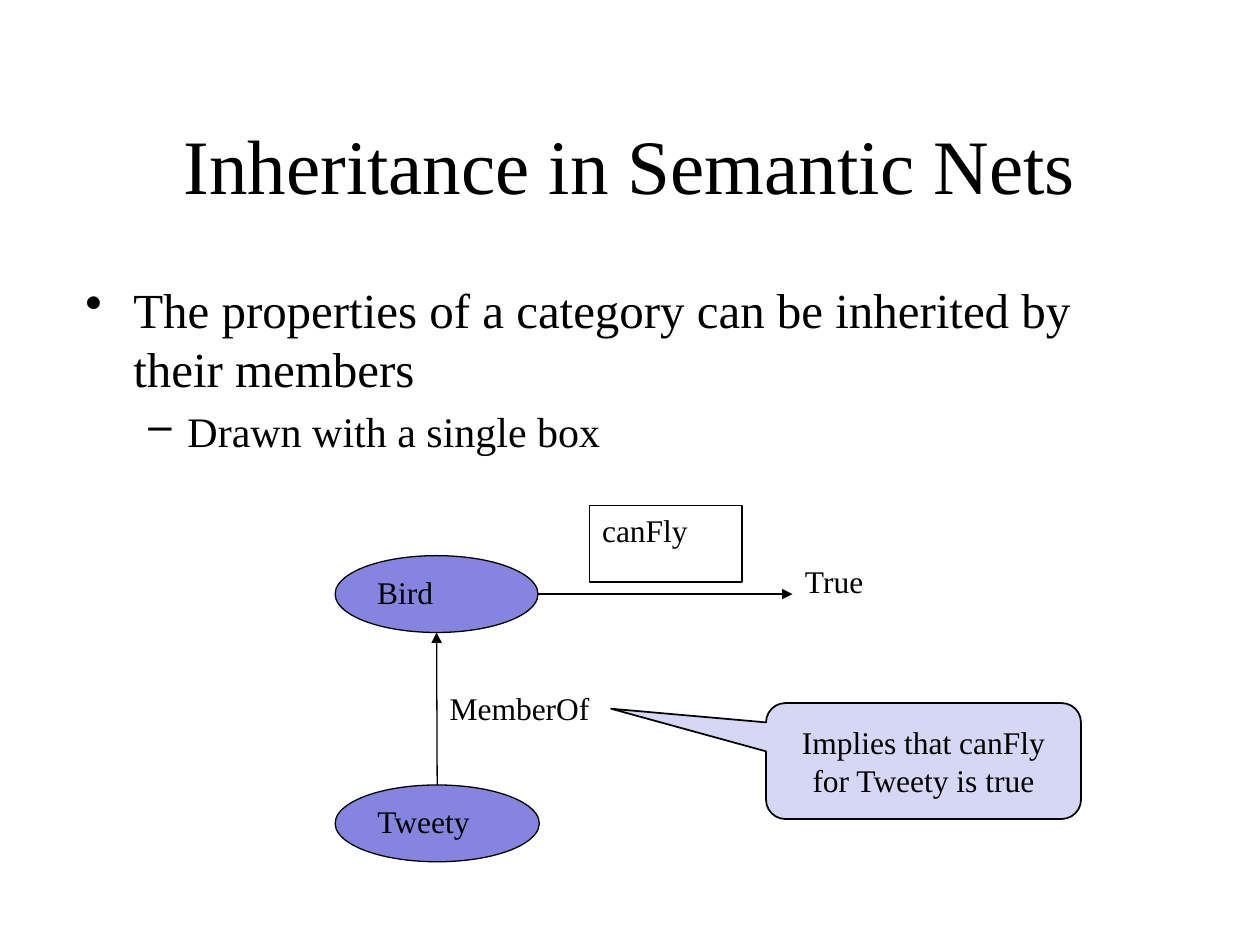
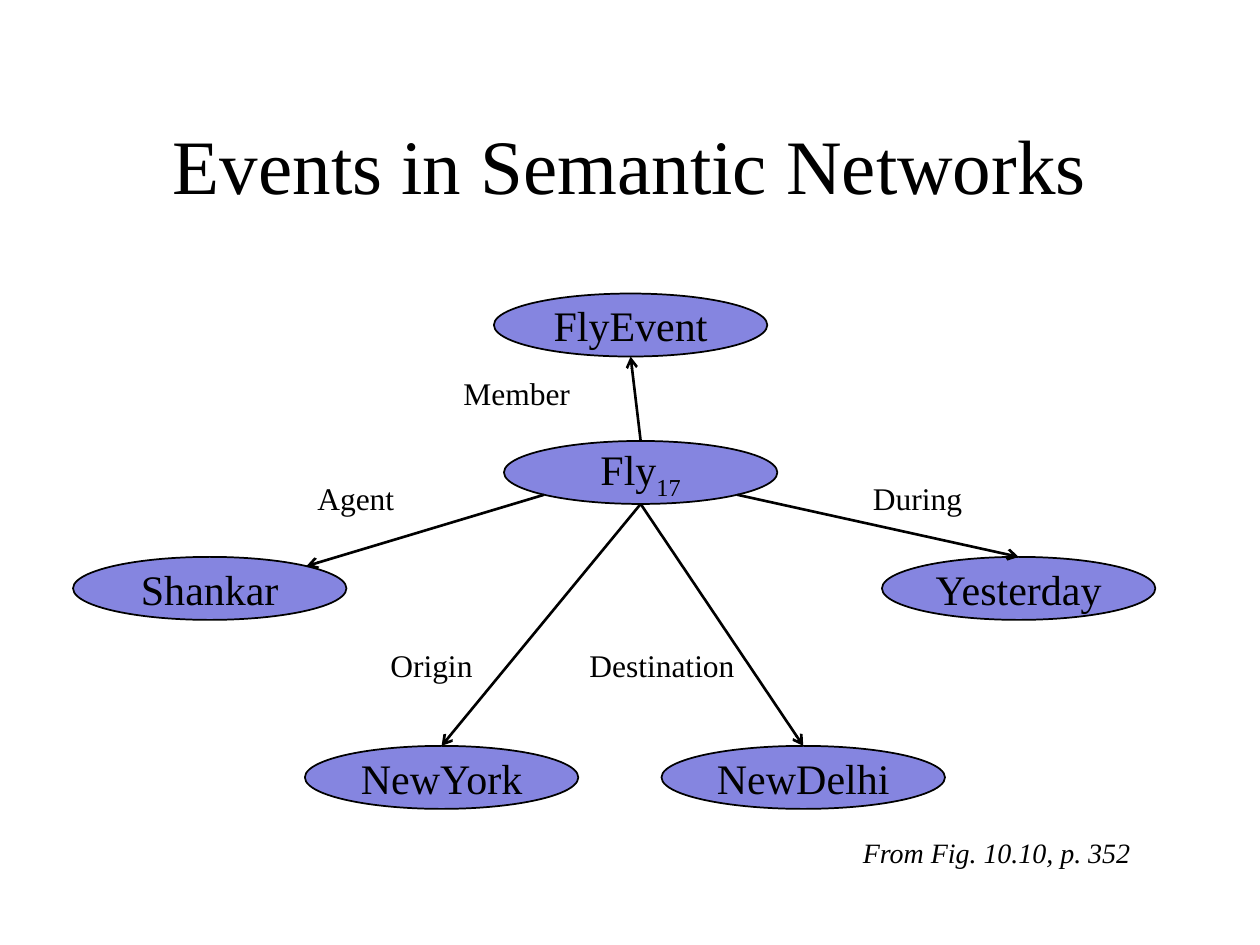
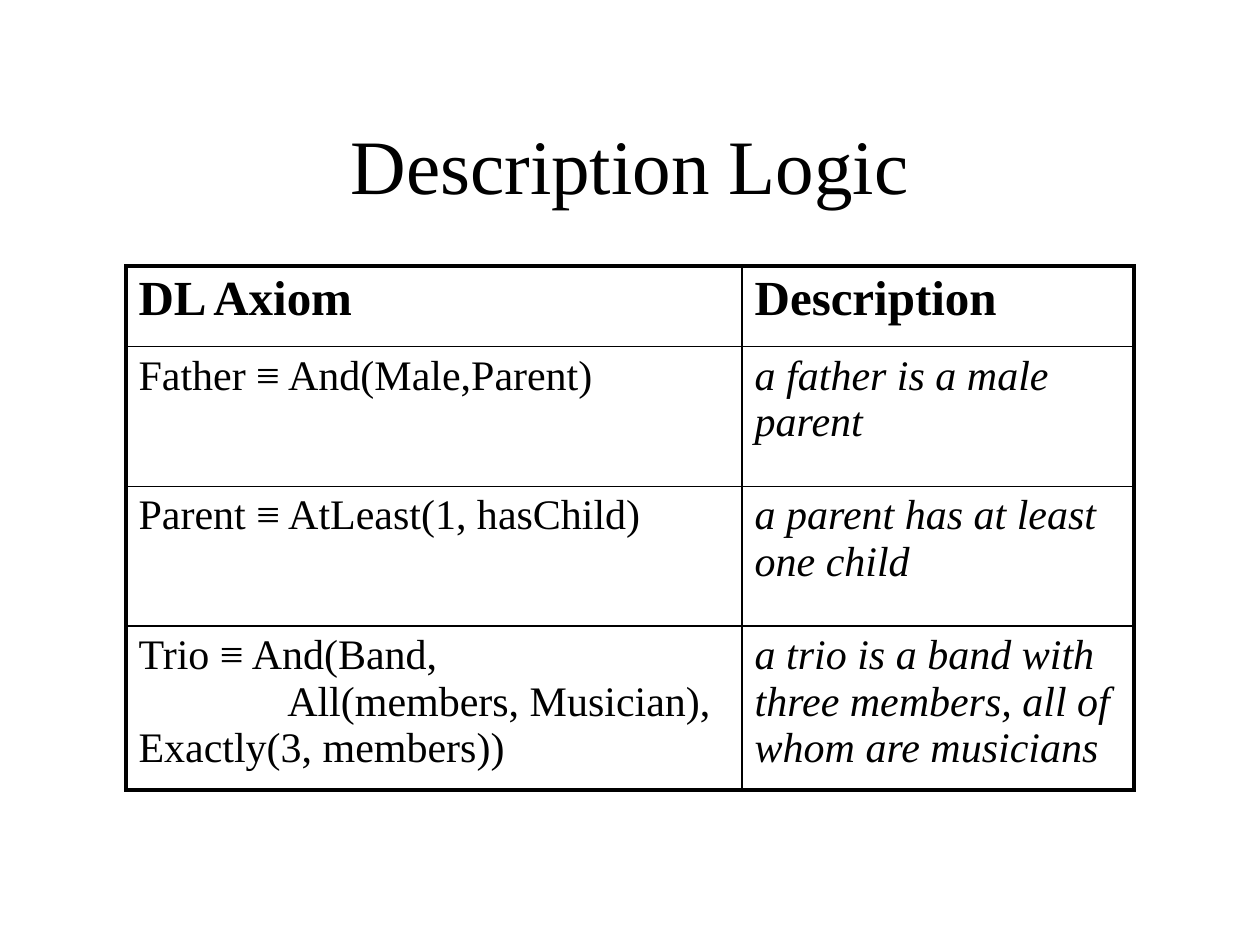
from dataclasses import dataclass
from math import cos, radians, sin
from typing import NamedTuple, Optional

from lxml.etree import SubElement
from pptx import Presentation
from pptx.dml.color import RGBColor as Rgb
from pptx.enum.shapes import MSO_CONNECTOR as Wire, MSO_SHAPE as Form
from pptx.enum.text import MSO_ANCHOR as Anchor, MSO_AUTO_SIZE as Auto, PP_ALIGN as Align
from pptx.oxml.ns import qn
from pptx.util import Emu, Inches, Pt

FONT = "Times New Roman"
HUES = {"ink": "000000", "node": "8585E0", "note": "D6D6F5", "paper": "FFFFFF"}


class Box(NamedTuple):
    x: float
    y: float
    w: float
    h: float

    def size(self) -> list:
        return [Inches(v) for v in self]


@dataclass
class Node:
    text: str
    box: Box
    sub: str = ""


@dataclass
class Label:
    text: str
    box: Box
    size: int = 18
    slant: bool = False


@dataclass
class Tip:
    shape: object
    turn: int
    join: Optional[int] = None

    def point(self) -> tuple:
        s, a = self.shape, radians(self.turn)
        return (Emu(round(s.left + s.width * (1 - sin(a)) / 2)),
                Emu(round(s.top + s.height * (1 - cos(a)) / 2)))


def hue(name: str) -> Rgb:
    return Rgb.from_string(HUES[name])


def write(frame, text: str, *, size: int = 18, align=Align.LEFT, bold: bool = False,
          slant: bool = False, sub: str = "", lead: bool = False, more: bool = False):
    para = frame.add_paragraph() if more else frame.paragraphs[0]
    para.alignment = align
    if lead:
        para.space_before = Pt(size * 0.2)
    for i, line in enumerate(text.split("\n")):
        if i:
            para.add_line_break()
        style(para.add_run(), line, size, bold, slant)
    if sub:
        run = para.add_run()
        style(run, sub, size, bold, slant)
        run.font._element.set("baseline", "-25000")
    return para


def style(run, text: str, size: int, bold: bool, slant: bool) -> None:
    run.text = text
    font = run.font
    font.name, font.size = FONT, Pt(size)
    font.bold, font.italic = bold, slant
    font.color.rgb = hue("ink")


def shape(slide, form, box: Box, fill: str, width: float = 1, anchor=Anchor.MIDDLE):
    item = slide.shapes.add_shape(form, *box.size())
    item.shadow.inherit = False
    item.fill.solid()
    item.fill.fore_color.rgb = hue(fill)
    item.line.color.rgb = hue("ink")
    item.line.width = Pt(width)
    item.text_frame.vertical_anchor = anchor
    return item


def panel(slide, box: Box, wrap: bool = True):
    item = slide.shapes.add_textbox(*box.size())
    item.text_frame.word_wrap = wrap
    return item


def label(slide, spec_: Label, wrap: bool = False):
    item = panel(slide, spec_.box, wrap)
    if not wrap:
        item.text_frame.auto_size = Auto.SHAPE_TO_FIT_TEXT
    write(item.text_frame, spec_.text, size=spec_.size, slant=spec_.slant)
    return item


def arrow(slide, start: Tip, end: Tip, width: float, head: str) -> None:
    item = slide.shapes.add_connector(Wire.STRAIGHT, *start.point(), *end.point())
    if start.join is not None:
        item.begin_connect(start.shape, start.join)
    if end.join is not None:
        item.end_connect(end.shape, end.join)
    item.line.color.rgb = hue("ink")
    item.line.width = Pt(width)
    props = item._element.spPr
    SubElement(props.find(qn("a:ln")), qn("a:tailEnd"), type=head)
    SubElement(props, qn("a:effectLst"))


def page(deck, title: str):
    slide = deck.slides.add_slide(deck.slide_layouts[6])
    frame = panel(slide, Box(0.75, 0.67, 8.5, 1.25)).text_frame
    frame.vertical_anchor = Anchor.MIDDLE
    write(frame, title, size=44, align=Align.CENTER)
    return slide


def bullet(para, mark: str, left: float, hang: float) -> None:
    props = para._p.get_or_add_pPr()
    props.set("marL", str(Inches(left)))
    props.set("indent", str(-Inches(hang)))
    SubElement(props, qn("a:buChar"), char=mark)


def nets(deck) -> None:
    slide = page(deck, "Inheritance in Semantic Nets")
    body = panel(slide, Box(0.58, 2.17, 8.5, 1.58)).text_frame
    bullet(write(body, "The properties of a category can be inherited by their members",
                 size=28, lead=True), "•", 0.38, 0.38)
    bullet(write(body, "Drawn with a single box", size=24, lead=True, more=True),
           "–", 0.81, 0.31)

    note = shape(slide, Form.ROUNDED_RECTANGULAR_CALLOUT, Box(6.08, 5.58, 2.5, 0.92), "note")
    for i, value in enumerate((-0.992, -0.451, 0.167)):
        note.adjustments[i] = value
    write(note.text_frame, "Implies that canFly for Tweety is true", align=Align.CENTER)

    def block(form, text: str, box: Box, fill: str):
        item = shape(slide, form, box, fill, 0.75, Anchor.TOP)
        write(item.text_frame, text)
        return item

    bird = block(Form.OVAL, "Bird", Box(2.66, 4.41, 1.61, 0.61), "node")
    tweety = block(Form.OVAL, "Tweety", Box(2.66, 6.23, 1.62, 0.61), "node")
    block(Form.RECTANGLE, "canFly", Box(4.68, 4.01, 1.21, 0.61), "paper")
    true = label(slide, Label("True", Box(6.29, 4.41, 1.01, 0.61)), wrap=True)
    label(slide, Label("MemberOf", Box(3.47, 5.42, 1.61, 0.4)), wrap=True)
    arrow(slide, Tip(bird, 270), Tip(true, 90, 1), 0.75, "triangle")
    arrow(slide, Tip(tweety, 0, 0), Tip(bird, 180), 0.75, "triangle")


def events(deck) -> None:
    slide = page(deck, "Events in Semantic Networks")
    wide, tall = 2.17, 0.5
    nodes = [
        Node("FlyEvent", Box(3.92, 2.33, wide, tall)),
        Node("Fly", Box(4, 3.5, wide, tall), "17"),
        Node("Shankar", Box(0.58, 4.42, wide, tall)),
        Node("NewYork", Box(2.42, 5.92, wide, tall)),
        Node("NewDelhi", Box(5.25, 5.92, 2.25, tall)),
        Node("Yesterday", Box(7, 4.42, wide, tall)),
    ]
    drawn = {}
    for node in nodes:
        item = shape(slide, Form.OVAL, node.box, "node")
        item.text_frame.word_wrap = False
        write(item.text_frame, node.text, size=24, align=Align.CENTER, sub=node.sub)
        drawn[node.text] = item

    fly = drawn["Fly"]
    links = [
        (Tip(fly, 0, 0), Tip(drawn["FlyEvent"], 180)),
        (Tip(fly, 135), Tip(drawn["Shankar"], 315)),
        (Tip(fly, 180), Tip(drawn["NewYork"], 0, 0)),
        (Tip(fly, 180), Tip(drawn["NewDelhi"], 0, 0)),
        (Tip(fly, 225), Tip(drawn["Yesterday"], 0, 0)),
    ]
    for start, end in links:
        arrow(slide, start, end, 1.5, "arrow")

    for item in (
        Label("Member", Box(3.58, 2.92, 1.06, 0.4)),
        Label("Agent", Box(2.42, 3.75, 0.82, 0.4)),
        Label("Origin", Box(3, 5.08, 0.86, 0.4)),
        Label("Destination", Box(4.58, 5.08, 1.37, 0.4)),
        Label("During", Box(6.83, 3.75, 0.92, 0.4)),
        Label("From Fig. 10.10, p. 352", Box(6.75, 6.58, 2.34, 0.37), 16, True),
    ):
        label(slide, item)


def border(cell, side: str, width: float) -> None:
    line = SubElement(cell._tc.get_or_add_tcPr(), qn(f"a:ln{side}"), w=str(Pt(width)))
    fill = SubElement(line, qn("a:solidFill"))
    SubElement(fill, qn("a:srgbClr"), val=HUES["ink"])


def logic(deck) -> None:
    slide = page(deck, "Description Logic")
    rows = [
        ("DL Axiom", "Description"),
        ("Father ≡ And(Male,Parent)", "a father is a male parent"),
        ("Parent ≡ AtLeast(1, hasChild)", "a parent has at least one child"),
        ("Trio ≡ And(Band,\n\tAll(members, Musician),\nExactly(3, members))",
         "a trio is a band with three members, all of whom are musicians"),
    ]
    wides, talls = (4.89, 3.11), (0.64, 1.11, 1.11, 1.11)
    box = Box(1, 2.11, sum(wides), sum(talls))
    grid = slide.shapes.add_table(len(rows), len(wides), *box.size()).table
    grid.first_row = grid.horz_banding = False
    for col, wide in zip(grid.columns, wides):
        col.width = Inches(wide)
    for r, (row, tall) in enumerate(zip(rows, talls)):
        grid.rows[r].height = Inches(tall)
        for c, text in enumerate(row):
            cell = grid.cell(r, c)
            top = r == 0
            edges = {"L": c == 0, "R": c == len(wides) - 1,
                     "T": top, "B": r == len(rows) - 1}
            for side, outer in edges.items():
                border(cell, side, 2.25 if outer else 1)
            cell.fill.background()
            para = write(cell.text_frame, text, size=28 if top else 24, bold=top,
                         slant=c == 1 and not top, lead=True)
            if "\t" in text:
                tabs = SubElement(para._p.get_or_add_pPr(), qn("a:tabLst"))
                SubElement(tabs, qn("a:tab"), pos=str(Inches(1.18)), algn="l")


def main() -> None:
    deck = Presentation()
    deck.slide_width, deck.slide_height = Inches(10), Inches(7.5)
    for build in (nets, events, logic):
        build(deck)
    deck.save("out.pptx")


if __name__ == "__main__":
    main()
